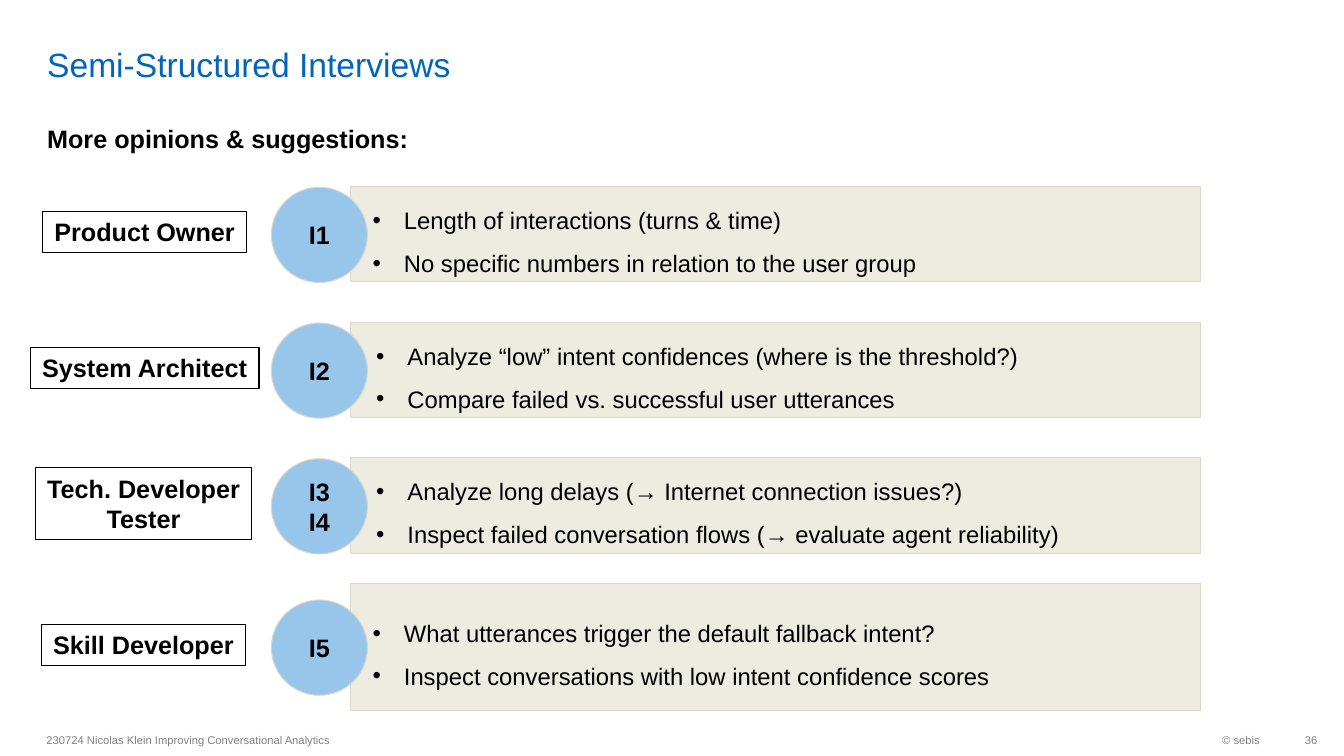
from lxml import etree
from pptx import Presentation, util as u
from pptx.dml.color import RGBColor
from pptx.enum import shapes, text
from pptx.oxml.ns import qn

HUES = {"blue": "0065BD", "sky": "98C6EA", "sand": "EEECE1",
        "edge": "DAD7CB", "ink": "000000", "gray": "808080"}
KIND = shapes.MSO_SHAPE
SIDE = text.PP_ALIGN
ANCHOR = text.MSO_ANCHOR


class Deck:
    font = "Arial"

    def __init__(self):
        self.prs = Presentation()
        self.prs.slide_width = u.Cm(33.87)
        self.prs.slide_height = u.Cm(19.05)
        self.slide = self.prs.slides.add_slide(self.prs.slide_layouts[6])

    def hue(self, name):
        return RGBColor.from_string(HUES[name])

    def label(self, shape, lines, size, hue="ink", bold=False, side=SIDE.LEFT,
              anchor=ANCHOR.TOP, wrap=True, space=1, bullet=False):
        frame = shape.text_frame
        frame.word_wrap = wrap
        frame.vertical_anchor = anchor
        frame.text = "\n".join(lines)
        for para in frame.paragraphs:
            if bullet:
                props = para._p.get_or_add_pPr()
                props.set("marL", str(u.Cm(0.79)))
                props.set("indent", str(u.Cm(-0.79)))
                etree.SubElement(props, qn("a:buFont")).set("typeface", self.font)
                etree.SubElement(props, qn("a:buChar")).set("char", "•")
            para.alignment = side
            para.line_spacing = float(space)
            para.font.name = self.font
            para.font.size = u.Pt(size)
            para.font.bold = bold
            para.font.color.rgb = self.hue(hue)
        return frame

    def note(self, at, lines, size, **style):
        box = self.slide.shapes.add_textbox(*map(u.Cm, at))
        return self.label(box, lines, size, **style)

    def shape(self, kind, at, fill=None, line="edge", width=0.75):
        item = self.slide.shapes.add_shape(kind, *map(u.Cm, at))
        item.shadow.inherit = False
        if fill:
            item.fill.solid()
            item.fill.fore_color.rgb = self.hue(fill)
        else:
            item.fill.background()
        item.line.color.rgb = self.hue(line)
        item.line.width = u.Pt(width)
        return item

    def row(self, mid, high, code, left, wide, role, indent, points):
        self.shape(KIND.RECTANGLE, (8.84, mid - high / 2, 21.41, high), "sand")
        disc = self.shape(KIND.OVAL, (6.84, mid - 1.18, 2.42, 2.4), "sky")
        self.label(disc, [code], 18, bold=True, side=SIDE.CENTER,
                   anchor=ANCHOR.MIDDLE)
        self.note((indent, mid - 1.2, 21.1, 2.31), points, 17,
                  space=1.5, bullet=True)
        tall = 0.26 + 0.77 * len(role)
        tag = self.shape(KIND.RECTANGLE, (left, mid - 0.05 - tall / 2, wide, tall),
                         line="ink", width=0.85)
        self.label(tag, role, 18, bold=True, side=SIDE.CENTER, wrap=False)


def main():
    deck = Deck()
    title = deck.note((0.94, 0.13, 29.4, 2), ["Semi-Structured Interviews"], 24,
                      hue="blue", anchor=ANCHOR.BOTTOM)
    title.margin_top = title.margin_bottom = 0
    deck.note((0.94, 2.6, 32, 1.7), ["More opinions & suggestions:"], 18,
              bold=True, space=1.5)

    rows = [
        (5.9, 2.4, "I1", 1.07, 5.15, ["Product Owner"], 9.14,
         ["Length of interactions (turns & time)",
          "No specific numbers in relation to the user group"]),
        (9.32, 2.4, "I2", 0.76, 5.77, ["System Architect"], 9.23,
         ["Analyze “low” intent confidences (where is the threshold?)",
          "Compare failed vs. successful user utterances"]),
        (12.74, 2.4, "I3 I4", 0.89, 5.46, ["Tech. Developer", "Tester"], 9.23,
         ["Analyze long delays (→ Internet connection issues?)",
          "Inspect failed conversation flows (→ evaluate agent reliability)"]),
        (16.3, 3.2, "I5", 1.04, 5.15, ["Skill Developer"], 9.14,
         ["What utterances trigger the default fallback intent?",
          "Inspect conversations with low intent confidence scores"]),
    ]
    for row in rows:
        deck.row(*row)

    foot = {"hue": "gray", "anchor": ANCHOR.MIDDLE}
    deck.note((0.92, 18.25, 16, 0.8),
              ["230724 Nicolas Klein Improving Conversational Analytics"], 8, **foot)
    deck.note((26.06, 18.25, 5.94, 0.8), ["© sebis"], 8, side=SIDE.RIGHT, **foot)
    page = deck.note((32, 18.25, 1.2, 0.8), ["36"], 8, side=SIDE.RIGHT, **foot)
    page.margin_right = 0
    deck.prs.save("out.pptx")


if __name__ == "__main__":
    main()
